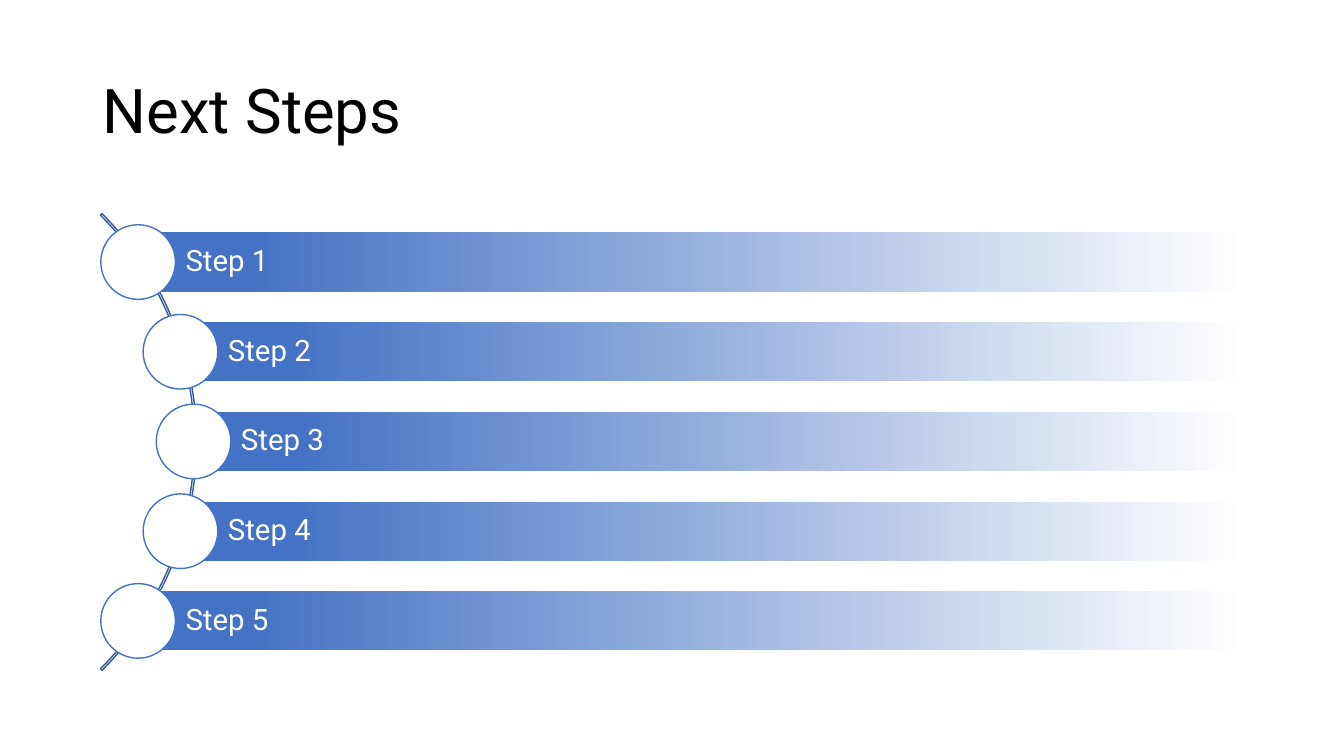
from dataclasses import dataclass
from math import sqrt

from pptx import Presentation
from pptx.dml.color import RGBColor
from pptx.enum.shapes import MSO_SHAPE
from pptx.enum.text import MSO_ANCHOR, PP_ALIGN
from pptx.util import Pt

ARC, BAR, DISC = MSO_SHAPE.BLOCK_ARC, MSO_SHAPE.RECTANGLE, MSO_SHAPE.OVAL
MIDDLE, LEFT = MSO_ANCHOR.MIDDLE, PP_ALIGN.LEFT
SCALE = 9144


@dataclass(frozen=True)
class Theme:
    font: str = "Roboto"
    ink: RGBColor = RGBColor(0x00, 0x00, 0x00)
    white: RGBColor = RGBColor(0xFF, 0xFF, 0xFF)
    blue: RGBColor = RGBColor(0x44, 0x72, 0xC4)
    navy: RGBColor = RGBColor(0x36, 0x5B, 0x9D)
    title: int = 44
    step: int = 21


THEME = Theme()


def px(count):
    return round(count) * SCALE


def write(frame, text, size, color):
    frame.text = text
    frame.word_wrap = True
    frame.vertical_anchor = MIDDLE
    para = frame.paragraphs[0]
    para.alignment = LEFT
    para.line_spacing = 0.9
    font = para.runs[0].font
    font.name, font.size = THEME.font, Pt(size)
    font.color.rgb = color


def add_title(slide, box, text):
    title = slide.shapes.title
    title.left, title.top, title.width, title.height = map(px, box)
    write(title.text_frame, text, THEME.title, THEME.ink)


def add_shape(slide, kind, box, line):
    shape = slide.shapes.add_shape(kind, *map(px, box))
    shape.shadow.inherit = False
    shape.line.color.rgb = line
    shape.line.width = Pt(1)
    return shape


def add_arc(slide, x, y, size):
    arc = add_shape(slide, ARC, (x - size / 2, y - size / 2, size, size), THEME.navy)
    arc.fill.background()
    for index, value in enumerate((189, 27, 0.0034)):
        arc.adjustments[index] = value


def add_step(slide, x, y, right, text):
    high, disc = 60, 74
    bar = add_shape(slide, BAR, (x, y - high / 2, right - x, high), THEME.white)
    bar.fill.gradient()
    bar.fill.gradient_angle = 0
    stops = zip(bar.fill.gradient_stops, (0.1, 1), (THEME.blue, THEME.white))
    for stop, place, color in stops:
        stop.position = place
        stop.color.rgb = color
    frame = bar.text_frame
    frame.margin_left = px(47)
    frame.margin_right = frame.margin_top = frame.margin_bottom = px(6)
    write(frame, text, THEME.step, THEME.white)
    dot = add_shape(slide, DISC, (x - disc / 2, y - disc / 2, disc, disc), THEME.blue)
    dot.fill.solid()
    dot.fill.fore_color.rgb = THEME.white


def add_steps(slide, box, steps):
    left, top, width, height = box
    hub, mid, reach = left - 224, top + height / 2, 317
    pitch = 89
    add_arc(slide, hub, mid, 641)
    for index, text in enumerate(steps):
        drop = (index - (len(steps) - 1) / 2) * pitch
        x = hub + sqrt(reach ** 2 - drop ** 2)
        add_step(slide, x, mid + drop, left + width, text)


def main():
    deck = Presentation()
    deck.slide_width, deck.slide_height = px(1333), px(750)
    slide = deck.slides.add_slide(deck.slide_layouts[5])
    add_title(slide, (92, 40, 1150, 145), "Next Steps")
    add_steps(slide, (99, 210, 1136, 456), [f"Step {n}" for n in range(1, 6)])
    deck.save("out.pptx")


if __name__ == "__main__":
    main()
